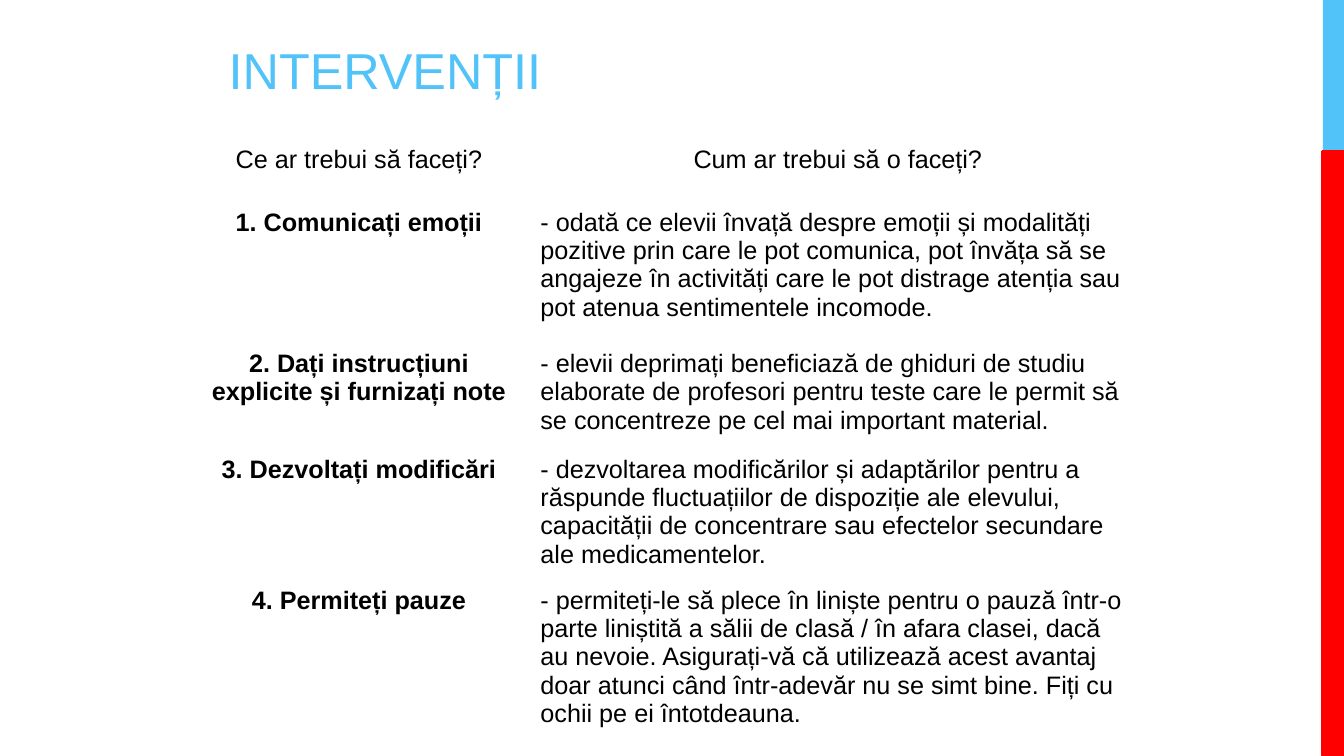
import pptx
import pptx.dml.color
import pptx.enum.shapes
import pptx.enum.text
import pptx.util
from pptx.util import Inches

BLUE = pptx.dml.color.RGBColor(0x51, 0xC3, 0xF9)
RED = pptx.dml.color.RGBColor(0xFF, 0x00, 0x00)
BLACK = pptx.dml.color.RGBColor(0x00, 0x00, 0x00)
FONT = "Arial"

HEADER = ("Ce ar trebui să faceți?", "Cum ar trebui să o faceți?")
INTERVENTIONS = [
    ("1. Comunicați emoții",
     "- odată ce elevii învață despre emoții și modalități pozitive prin care "
     "le pot comunica, pot învăța să se angajeze în activități care le pot "
     "distrage atenția sau pot atenua sentimentele incomode."),
    ("2. Dați instrucțiuni explicite și furnizați note",
     "- elevii deprimați beneficiază de ghiduri de studiu elaborate de "
     "profesori pentru teste care le permit să se concentreze pe cel mai "
     "important material."),
    ("3. Dezvoltați modificări",
     "- dezvoltarea modificărilor și adaptărilor pentru a răspunde "
     "fluctuațiilor de dispoziție ale elevului, capacității de concentrare "
     "sau efectelor secundare ale medicamentelor."),
    ("4. Permiteți pauze",
     "- permiteți-le să plece în liniște pentru o pauză într-o parte "
     "liniștită a sălii de clasă / în afara clasei, dacă au nevoie. "
     "Asigurați-vă că utilizează acest avantaj doar atunci când într-adevăr "
     "nu se simt bine. Fiți cu ochii pe ei întotdeauna."),
]
COLUMN_WIDTHS = (3.4, 6.1)
ROW_HEIGHTS = (0.63, 1.4, 1.05, 1.08, 1.37)


def write_text(text_frame, text, size, color, bold=False, centered=False):
    text_frame.text = text
    paragraph = text_frame.paragraphs[0]
    alignment = pptx.enum.text.PP_ALIGN
    paragraph.alignment = alignment.CENTER if centered else alignment.LEFT
    font = paragraph.runs[0].font
    font.name = FONT
    font.size = pptx.util.Pt(size)
    font.bold = bold
    font.color.rgb = color


def add_side_bar(slide, top, height, color, outlined=False):
    bar = slide.shapes.add_shape(
        pptx.enum.shapes.MSO_SHAPE.RECTANGLE,
        Inches(13.12), Inches(top), Inches(0.21), Inches(height))
    bar.shadow.inherit = False
    bar.fill.solid()
    bar.fill.fore_color.rgb = color
    if outlined:
        bar.line.color.rgb = color
        bar.line.width = pptx.util.Pt(2.25)
    else:
        bar.line.fill.background()


def add_title(slide, text):
    title = slide.shapes.add_textbox(
        Inches(2.17), Inches(0.29), Inches(6.33), Inches(0.75))
    title.text_frame.word_wrap = True
    title.text_frame.vertical_anchor = pptx.enum.text.MSO_ANCHOR.BOTTOM
    write_text(title.text_frame, text, 36, BLUE)


def add_intervention_table(slide):
    rows = [HEADER] + INTERVENTIONS
    table = slide.shapes.add_table(
        len(rows), len(HEADER), Inches(1.86), Inches(1.39),
        Inches(sum(COLUMN_WIDTHS)), Inches(sum(ROW_HEIGHTS))).table
    table.first_row = False
    table.horz_banding = False
    # Plain grid without the default style's borders
    style = table._tbl.tblPr.find(pptx.oxml.ns.qn("a:tableStyleId"))
    style.text = "{2D5ABB26-0587-4C30-8999-92F81FD0307C}"

    for column, width in zip(table.columns, COLUMN_WIDTHS):
        column.width = Inches(width)
    for row, height in zip(table.rows, ROW_HEIGHTS):
        row.height = Inches(height)
    for row_index, texts in enumerate(rows):
        for column_index, text in enumerate(texts):
            cell = table.cell(row_index, column_index)
            cell.fill.background()
            is_header = row_index == 0
            is_label = column_index == 0
            write_text(cell.text_frame, text, 18, BLACK,
                       bold=is_label and not is_header,
                       centered=is_label or is_header)


def main():
    presentation = pptx.Presentation()
    presentation.slide_width = Inches(13.33)
    presentation.slide_height = Inches(7.5)
    slide = presentation.slides.add_slide(presentation.slide_layouts[6])

    # Coloured bars on the right edge
    add_side_bar(slide, 0, 1.5, BLUE)
    add_side_bar(slide, 1.5, 6, RED, outlined=True)

    # Title and table
    add_title(slide, "INTERVENȚII")
    add_intervention_table(slide)

    presentation.save("out.pptx")


if __name__ == "__main__":
    main()
